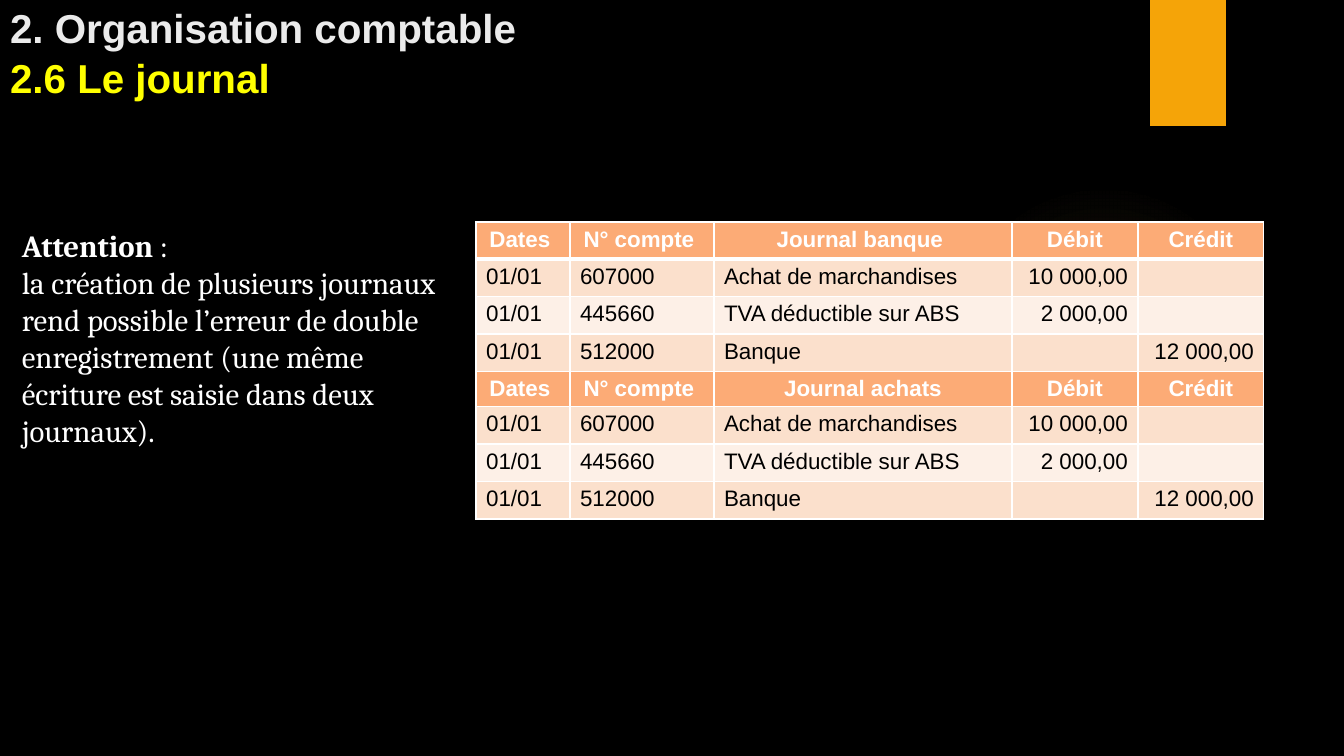
from lxml import etree
from pptx import Presentation
from pptx.dml.color import RGBColor
from pptx.enum.shapes import MSO_SHAPE
from pptx.enum.text import MSO_ANCHOR, PP_ALIGN
from pptx.oxml import parse_xml
from pptx.oxml.ns import nsdecls, qn
from pptx.util import Pt

PX = 9071
LEFT, CENTER, RIGHT, JUSTIFY = PP_ALIGN.LEFT, PP_ALIGN.CENTER, PP_ALIGN.RIGHT, PP_ALIGN.JUSTIFY
OVAL, RECTANGLE = MSO_SHAPE.OVAL, MSO_SHAPE.RECTANGLE
BOTTOM = MSO_ANCHOR.BOTTOM
WHITE, BLACK = "FFFFFF", "000000"


def paint(fill, color):
    fill.solid()
    fill.fore_color.rgb = RGBColor.from_string(color)


def write(paragraph, text, font="Arial", size=16, color=WHITE, bold=False, align=LEFT):
    paragraph.alignment = align
    run = paragraph.add_run()
    run.text = text
    run.font.name = font
    run.font.size = Pt(size)
    run.font.bold = bold
    paint(run.font.fill, color)


prs = Presentation()
prs.slide_width = 1344 * PX
prs.slide_height = 756 * PX
slide = prs.slides.add_slide(prs.slide_layouts[0])
paint(slide.background.fill, BLACK)
title, subtitle = slide.placeholders
subtitle.element.getparent().remove(subtitle.element)

glow = slide.shapes.add_shape(OVAL, 949 * PX, 184 * PX, 310 * PX, 310 * PX)
glow.shadow.inherit = False
glow.line.fill.background()
glow.fill.background()
stops = "".join(
    f'<a:gs pos="{position * 1000}"><a:srgbClr val="FAC96A"><a:alpha val="{alpha * 1000}"/></a:srgbClr></a:gs>'
    for position, alpha in ((0, 7), (36, 6), (69, 0)))
glow_gradient = parse_xml(
    f'<a:gradFill {nsdecls("a")}><a:gsLst>{stops}</a:gsLst><a:path path="circle">'
    '<a:fillToRect l="50000" t="50000" r="50000" b="50000"/></a:path></a:gradFill>')
glow_properties = glow.element.spPr
glow_properties.replace(glow_properties.find(qn("a:noFill")), glow_gradient)

bookmark = slide.shapes.add_shape(RECTANGLE, 1150 * PX, 0, 76 * PX, 126 * PX)
bookmark.shadow.inherit = False
bookmark.line.fill.background()
paint(bookmark.fill, "F5A408")

title.left, title.top, title.width, title.height = 0, 37 * PX, 1131 * PX, 70 * PX
title.text_frame.vertical_anchor = BOTTOM
heading = title.text_frame.paragraphs[0]
heading.line_spacing = 1.05
write(heading, "2. Organisation comptable", size=28.8, color="EBEBEB", bold=True)
heading.add_line_break()
write(heading, "2.6 Le journal", size=28.8, color="FFFF00", bold=True)

entries = [
    ("01/01", "607000", "Achat de marchandises", "10 000,00", ""),
    ("01/01", "445660", "TVA déductible sur ABS", "2 000,00", ""),
    ("01/01", "512000", "Banque", "", "12 000,00"),
]
ledger = []
for journal in ("Journal banque ", "Journal achats"):
    ledger += [("Dates ", "N° compte ", journal, "Débit", "Crédit"), *entries]
column_widths = (94, 144, 298, 126, 126)
row_fills = ("FCAB76", "FBE0CC", "FDF0E7", "FBE0CC")
column_aligns = (LEFT, LEFT, LEFT, RIGHT, RIGHT)

journals = slide.shapes.add_table(
    len(ledger), len(column_widths), 476 * PX, 222 * PX, sum(column_widths) * PX, 282 * PX).table
for column, width in zip(journals.columns, column_widths):
    column.width = width * PX
for row_index, entry in enumerate(ledger):
    journals.rows[row_index].height = (35 if row_index else 37) * PX
    is_header = row_index % 4 == 0
    for column_index, value in enumerate(entry):
        cell = journals.cell(row_index, column_index)
        properties = cell._tc.get_or_add_tcPr()
        for side in ("L", "R", "T", "B"):
            thick = (row_index, side) in ((0, "B"), (1, "T"))
            properties.append(parse_xml(
                f'<a:ln{side} {nsdecls("a")} w="{Pt(3 if thick else 1)}">'
                f'<a:solidFill><a:srgbClr val="{WHITE}"/></a:solidFill></a:ln{side}>'))
        paint(cell.fill, row_fills[row_index % 4])
        content = cell.text_frame.paragraphs[0]
        if value:
            write(content, value, color=WHITE if is_header else BLACK, bold=is_header,
                  align=CENTER if is_header else column_aligns[column_index])
        else:
            etree.SubElement(content._p, qn("a:endParaRPr"), sz="1600")

warning = slide.shapes.add_textbox(12 * PX, 222 * PX, 448 * PX, 234 * PX).text_frame
warning.word_wrap = True
lead = warning.paragraphs[0]
write(lead, "Attention ", font="Cambria", size=22, bold=True, align=JUSTIFY)
write(lead, ": ", font="Cambria", size=22, align=JUSTIFY)
write(warning.add_paragraph(),
      "la création de plusieurs journaux rend possible l’erreur de double enregistrement "
      "(une même écriture est saisie dans deux journaux).", font="Cambria", size=22)

prs.save("out.pptx")
